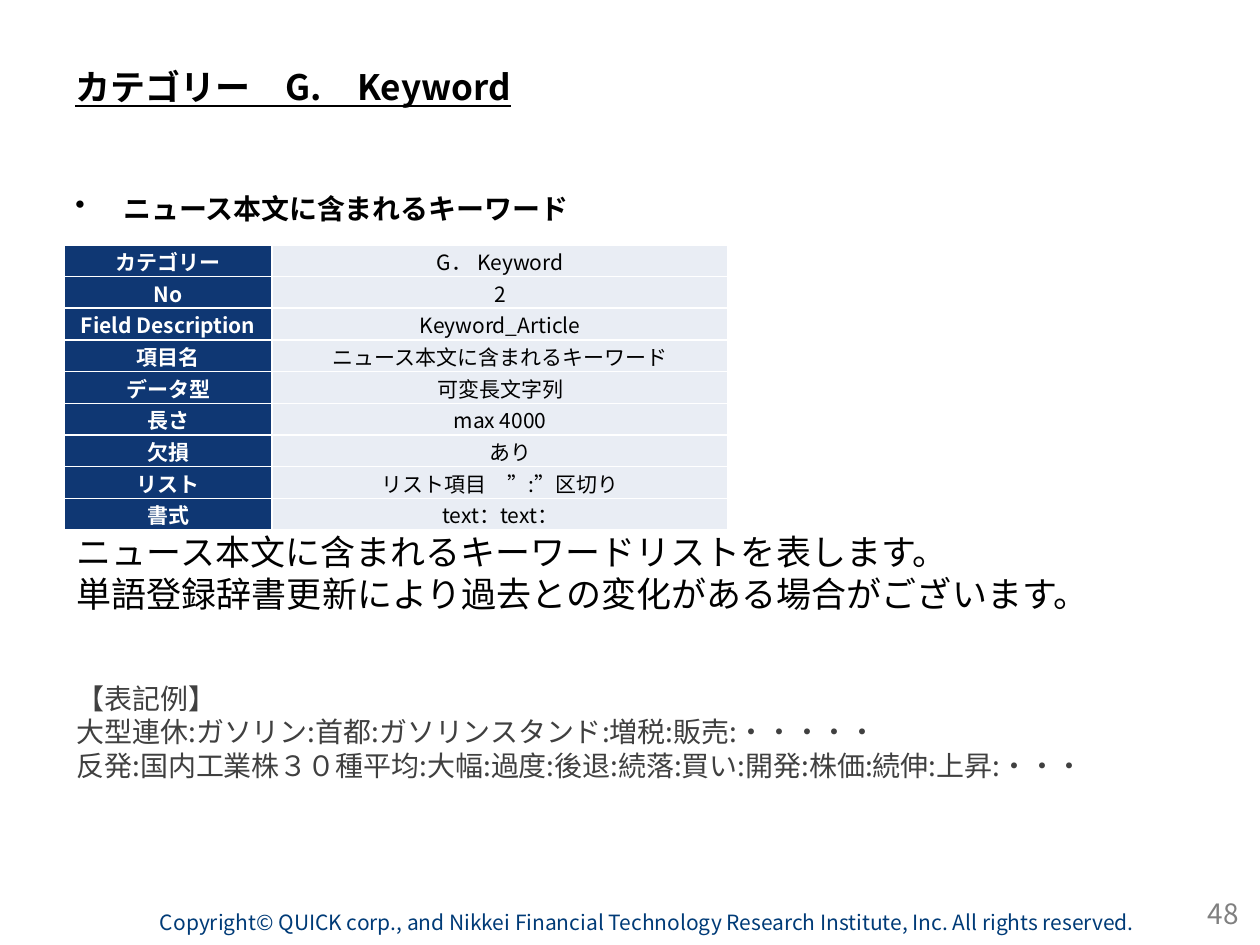
from dataclasses import dataclass

from lxml import etree
from pptx import Presentation, util as u
from pptx.dml.color import RGBColor
from pptx.enum import shapes, text
from pptx.oxml.ns import qn

WIDE, HIGH = 10, 7.5
FONT = "Noto Sans CJK JP"
BLACK, WHITE, NAVY, PALE = "000000", "FFFFFF", "0F3773", "E9EDF4"
BLUE, DARK, GREY = "003B77", "404040", "808080"
MID = text.MSO_ANCHOR.MIDDLE
LEFT, MIDST, RIGHT = text.PP_ALIGN.LEFT, text.PP_ALIGN.CENTER, text.PP_ALIGN.RIGHT


@dataclass
class Line:
    words: str
    size: float
    tint: str = BLACK
    bold: bool = False
    under: bool = False
    align: int = LEFT
    before: float = 0
    bullet: bool = False


@dataclass
class Box:
    """A text block; place holds left, top, width and height as shares of the slide."""
    place: tuple
    lines: list
    anchor: int = text.MSO_ANCHOR.TOP
    pad: bool = True
    fill: str = ""


ROWS = [
    ("カテゴリー", "G． Keyword"),
    ("No", "2"),
    ("Field Description", "Keyword_Article"),
    ("項目名", "ニュース本文に含まれるキーワード"),
    ("データ型", "可変長文字列"),
    ("長さ", "max 4000"),
    ("欠損", "　あり"),
    ("リスト", "リスト項目　”:”区切り"),
    ("書式", "text：text："),
]

BOXES = [
    Box((0.127, 0.963, 0.786, 0.027), pad=False, fill=WHITE, lines=[
        Line("Copyright© QUICK corp., and Nikkei Financial Technology Research "
             "Institute, Inc. All rights reserved.", 12, BLUE)]),
    Box((0.05, 0.04, 0.9, 0.103), anchor=MID, lines=[
        Line("カテゴリー　G.　Keyword", 20, bold=True, under=True)]),
    Box((0.05, 0.196, 0.9, 0.06), lines=[
        Line("ニュース本文に含まれるキーワード", 16, bold=True, bullet=True)]),
    Box((0.76, 0.94, 0.233, 0.053), anchor=MID, lines=[
        Line("48", 16, GREY, align=RIGHT)]),
    Box((0.051, 0.555, 0.898, 0.32), lines=[
        Line("ニュース本文に含まれるキーワードリストを表します。", 20),
        Line("単語登録辞書更新により過去との変化がある場合がございます。", 20),
        Line("【表記例】", 16, DARK, before=38),
        Line("大型連休:ガソリン:首都:ガソリンスタンド:増税:販売:・・・・・", 16, DARK),
        Line("反発:国内工業株３０種平均:大幅:過度:後退:続落:買い:開発:株価:続伸:上昇:・・・",
             16, DARK)]),
]


def paint(fill, tint: str) -> None:
    fill.solid()
    fill.fore_color.rgb = RGBColor.from_string(tint)


def share(place: tuple) -> list:
    return [u.Inches(part * side) for part, side in zip(place, (WIDE, HIGH) * 2)]


def write(frame, lines: list) -> None:
    for i, line in enumerate(lines):
        para = frame.add_paragraph() if i else frame.paragraphs[0]
        para.alignment = line.align
        if line.before:
            para.space_before = u.Pt(line.before)
        if line.bullet:
            props = para._p.get_or_add_pPr()
            props.set("marL", str(u.Inches(0.38)))
            props.set("indent", str(u.Inches(-0.38)))
            etree.SubElement(props, qn("a:buChar"), char="•")
        run = para.add_run()
        run.text = line.words
        font = run.font
        font.name, font.size = FONT, u.Pt(line.size)
        font.bold, font.underline = line.bold, line.under
        paint(font.fill, line.tint)
        etree.SubElement(run._r.get_or_add_rPr(), qn("a:ea"), typeface=FONT)


def draw_box(slide, box: Box) -> None:
    shape = slide.shapes.add_textbox(*share(box.place))
    if box.fill:
        paint(shape.fill, box.fill)
    frame = shape.text_frame
    frame.word_wrap = True
    frame.vertical_anchor = box.anchor
    if not box.pad:
        frame.margin_left = frame.margin_right = 0
        frame.margin_top = frame.margin_bottom = 0
    write(frame, box.lines)


def draw_table(slide) -> None:
    place = share((0.051, 0.259, 0.527, 0.302))
    table = slide.shapes.add_table(len(ROWS), 2, *place).table
    table.first_row = table.horz_banding = False
    for col, width in zip(table.columns, (1.65, 3.62)):
        col.width = u.Inches(width)
    for r, row in enumerate(ROWS):
        for c, words in enumerate(row):
            head = c == 0
            cell = table.cell(r, c)
            paint(cell.fill, NAVY if head else PALE)
            cell.vertical_anchor = MID
            cell.margin_left = cell.margin_right = cell.margin_top = u.Inches(0.01)
            cell.margin_bottom = 0
            write(cell.text_frame, [Line(words, 12, WHITE if head else BLACK,
                                         bold=head, align=MIDST)])


def main() -> None:
    deck = Presentation()
    deck.slide_width, deck.slide_height = u.Inches(WIDE), u.Inches(HIGH)
    slide = deck.slides.add_slide(deck.slide_layouts[6])
    for box in BOXES:
        draw_box(slide, box)
    draw_table(slide)
    deck.save("out.pptx")


if __name__ == "__main__":
    main()
